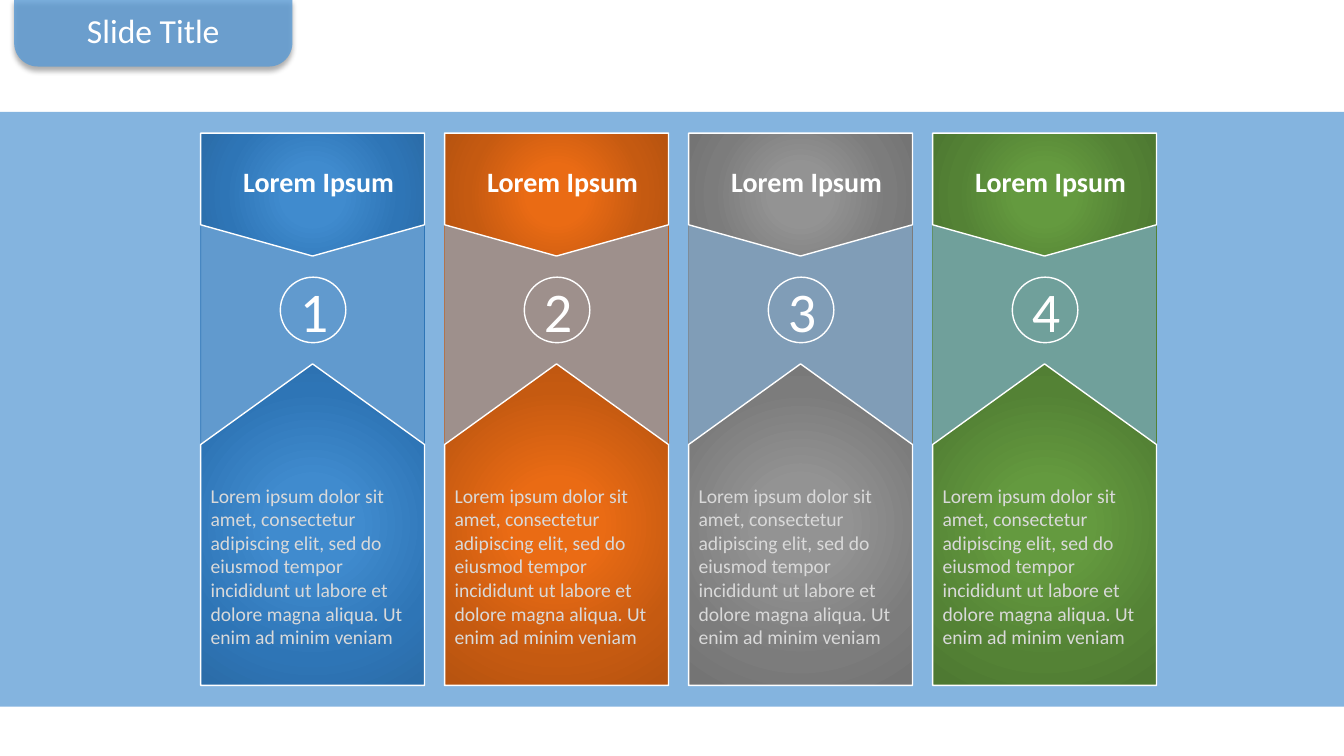
from lxml import etree
from pptx import Presentation
from pptx.dml.color import RGBColor
from pptx.enum.shapes import MSO_SHAPE
from pptx.enum.text import MSO_ANCHOR, MSO_AUTO_SIZE, PP_ALIGN
from pptx.oxml import parse_xml
from pptx.oxml.ns import qn
from pptx.util import Inches, Pt

RECTANGLE = MSO_SHAPE.RECTANGLE
OVAL = MSO_SHAPE.OVAL
TAB = MSO_SHAPE.ROUND_2_SAME_RECTANGLE
MIDDLE = MSO_ANCHOR.MIDDLE
GROW = MSO_AUTO_SIZE.SHAPE_TO_FIT_TEXT
LEFT, CENTER = PP_ALIGN.LEFT, PP_ALIGN.CENTER

FONT = "Calibri"
NS = "http://schemas.openxmlformats.org/drawingml/2006/main"
COLORS = {
    "white": "FFFFFF", "pale": "D9D9D9", "sky": "5B9BD5",
    "blue_light": "408BCE", "blue": "2E75B6", "blue_dark": "2B6DA9",
    "orange_light": "EA6B14", "orange": "C55A11", "orange_dark": "B85410",
    "gray_light": "939393", "gray": "7C7C7C", "gray_dark": "747474",
    "green_light": "649A3F", "green": "548235", "green_dark": "4E7932",
}
BODY = ("Lorem ipsum dolor sit amet, consectetur adipiscing elit, sed do eiusmod "
        "tempor incididunt ut labore et dolore magna aliqua. Ut enim ad minim veniam")
COLUMNS = [
    ("1", "Lorem Ipsum", BODY, "blue"),
    ("2", "Lorem Ipsum", BODY, "orange"),
    ("3", "Lorem Ipsum", BODY, "gray"),
    ("4", "Lorem Ipsum", BODY, "green"),
]
COLUMN_LEFT, COLUMN_TOP, COLUMN_WIDTH, COLUMN_PITCH = 1.99, 1.32, 2.22, 2.42


def rgb(name):
    return RGBColor.from_string(COLORS[name])


def fill_solid(shape, color, opacity):
    shape.fill.solid()
    shape.fill.fore_color.rgb = rgb(color)
    solid = shape._element.spPr.find(qn("a:solidFill"))
    etree.SubElement(solid[0], qn("a:alpha"), val=str(opacity * 1000))


def fill_radial(shape, hue):
    stops = [(0, hue + "_light"), (23, hue + "_light"), (69, hue), (97, hue + "_dark")]
    stop_xml = "".join(
        f'<a:gs pos="{pos * 1000}"><a:srgbClr val="{COLORS[name]}"/></a:gs>'
        for pos, name in stops)
    gradient = parse_xml(
        f'<a:gradFill xmlns:a="{NS}" rotWithShape="1"><a:gsLst>{stop_xml}</a:gsLst>'
        '<a:path path="circle"><a:fillToRect l="50000" t="50000" r="50000" b="50000"/>'
        '</a:path></a:gradFill>')
    shape.fill.background()
    properties = shape._element.spPr
    properties.replace(properties.find(qn("a:noFill")), gradient)


def add_drop_shadow(effects):
    effects.append(parse_xml(
        f'<a:outerShdw xmlns:a="{NS}" blurRad="{Pt(4)}" dist="{Pt(3)}" dir="5400000" '
        'algn="t" rotWithShape="0"><a:srgbClr val="000000"><a:alpha val="40000"/>'
        '</a:srgbClr></a:outerShdw>'))


def outline(shape, color, width):
    shape.line.color.rgb = rgb(color)
    shape.line.width = Pt(width)
    shape.shadow.inherit = False


def add_polygon(slide, left, top, points):
    corners = [(Inches(left + x), Inches(top + y)) for x, y in points]
    builder = slide.shapes.build_freeform(*corners[0])
    builder.add_line_segments(corners[1:], close=True)
    return builder.convert_to_shape()


def write(frame, text, size, color, align, bold=False):
    paragraph = frame.paragraphs[0]
    paragraph.text = text
    paragraph.alignment = align
    paragraph.font.name = FONT
    paragraph.font.size = Pt(size)
    paragraph.font.bold = bold
    paragraph.font.color.rgb = rgb(color)
    return paragraph


def add_text(slide, left, top, width, height, *style):
    box = slide.shapes.add_textbox(*map(Inches, (left, top, width, height)))
    box.text_frame.word_wrap = True
    box.text_frame.auto_size = GROW
    return write(box.text_frame, *style)


def add_backdrop(slide, left, top, width, height):
    backdrop = slide.shapes.add_shape(RECTANGLE, *map(Inches, (left, top, width, height)))
    fill_solid(backdrop, "sky", 75)
    backdrop.line.fill.background()
    backdrop.shadow.inherit = False


def add_column(slide, left, top, width, number, heading, body, hue):
    middle = width / 2
    band = add_polygon(slide, left, top + 0.63, [
        (0, 0), (0, 0.23), (middle, 0.57), (width, 0.23),
        (width, 2.62), (middle, 1.74), (0, 2.62)])
    fill_solid(band, hue, 40)
    outline(band, hue, 0.5)

    badge = slide.shapes.add_shape(
        OVAL, *map(Inches, (left + middle - 0.32, top + 1.43, 0.65, 0.65)))
    badge.fill.background()
    outline(badge, "white", 1)
    badge.text_frame.vertical_anchor = MIDDLE
    write(badge.text_frame, number, 40, "white", CENTER)

    header = add_polygon(slide, left, top, [
        (0, 0), (width, 0), (width, 0.91), (middle, 1.22), (0, 0.91)])
    panel = add_polygon(slide, left, top + 2.29, [
        (0, 3.19), (0, 0.8), (middle, 0), (width, 0.8), (width, 3.19)])
    for block in (header, panel):
        fill_radial(block, hue)
        outline(block, "white", 1)

    title = add_text(slide, left + 0.06, top + 0.26, width, 0.44,
                     heading, 20, "white", CENTER, True)
    run_properties = title.runs[0]._r.get_or_add_rPr()
    add_drop_shadow(etree.SubElement(run_properties, qn("a:effectLst")))
    add_text(slide, left, top + 3.43, width, 1.75, body, 14, "pale", LEFT)


def add_title_tab(slide, left, top, width, height):
    tab = slide.shapes.add_shape(TAB, *map(Inches, (left, top, width, height)))
    tab.rotation = 180
    tab.adjustments[0] = 0.35
    tab.adjustments[1] = 0
    fill_solid(tab, "sky", 80)
    tab.line.fill.background()
    tab.shadow.inherit = False
    add_drop_shadow(tab._element.spPr.find(qn("a:effectLst")))
    add_text(slide, left, top + 0.06, width, 0.5, "Slide Title", 24, "white", CENTER)


def main():
    deck = Presentation()
    deck.slide_width = Inches(13.33)
    deck.slide_height = Inches(7.5)
    slide = deck.slides.add_slide(deck.slide_layouts[6])
    add_backdrop(slide, 0, 1.11, 13.33, 5.9)
    for index, content in enumerate(COLUMNS):
        add_column(slide, COLUMN_LEFT + index * COLUMN_PITCH, COLUMN_TOP,
                   COLUMN_WIDTH, *content)
    add_title_tab(slide, 0.14, -0.01, 2.76, 0.67)
    deck.save("out.pptx")


if __name__ == "__main__":
    main()
